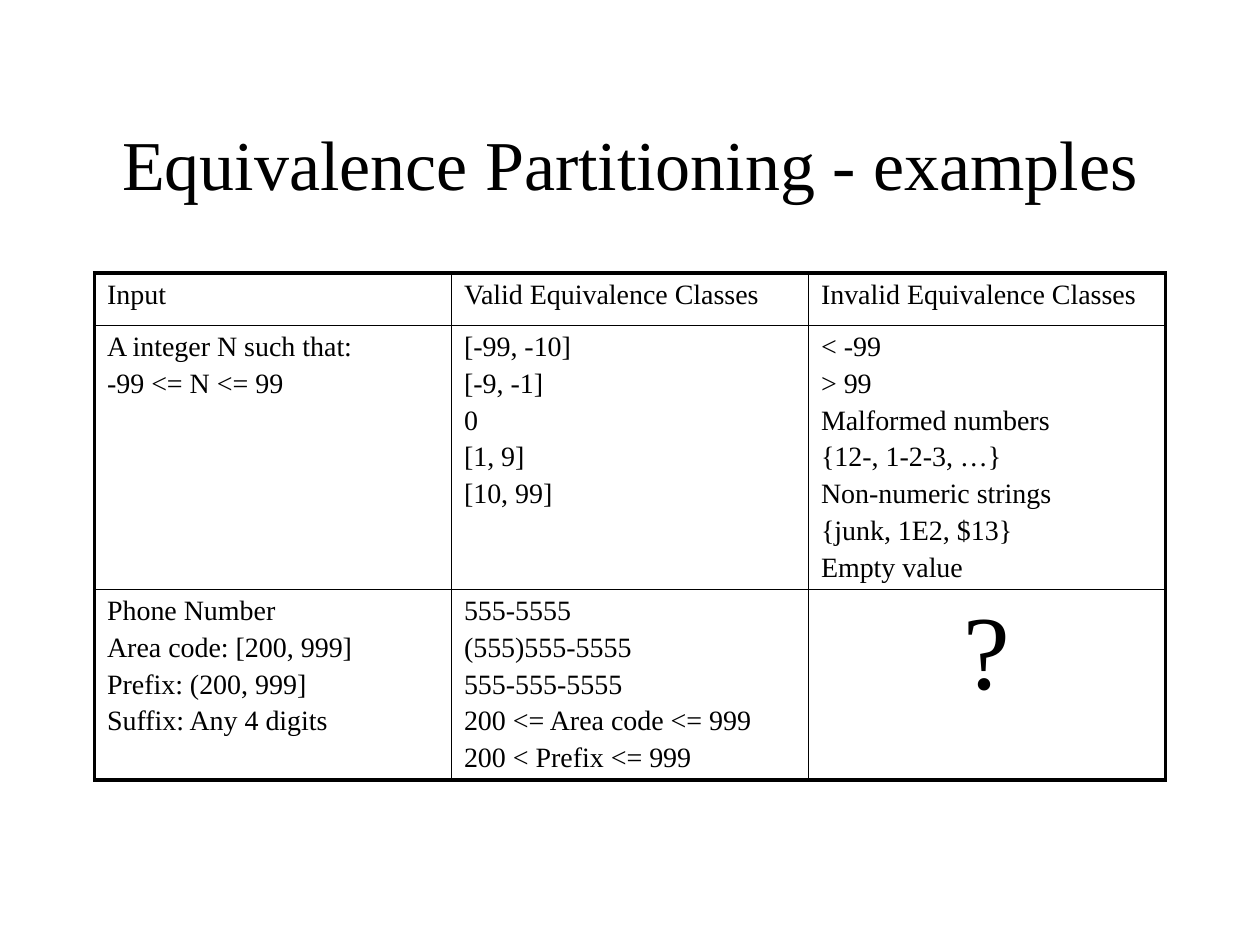
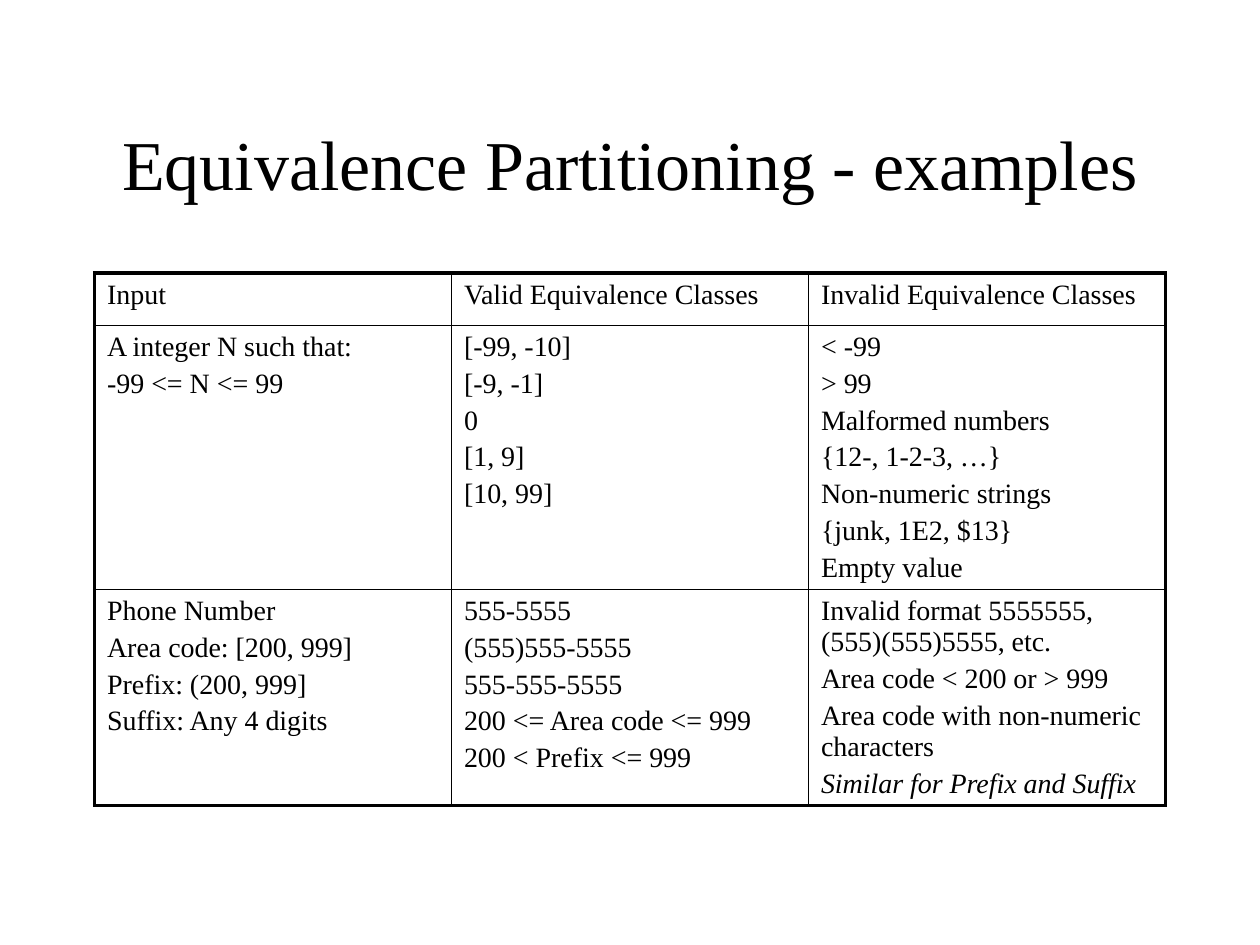
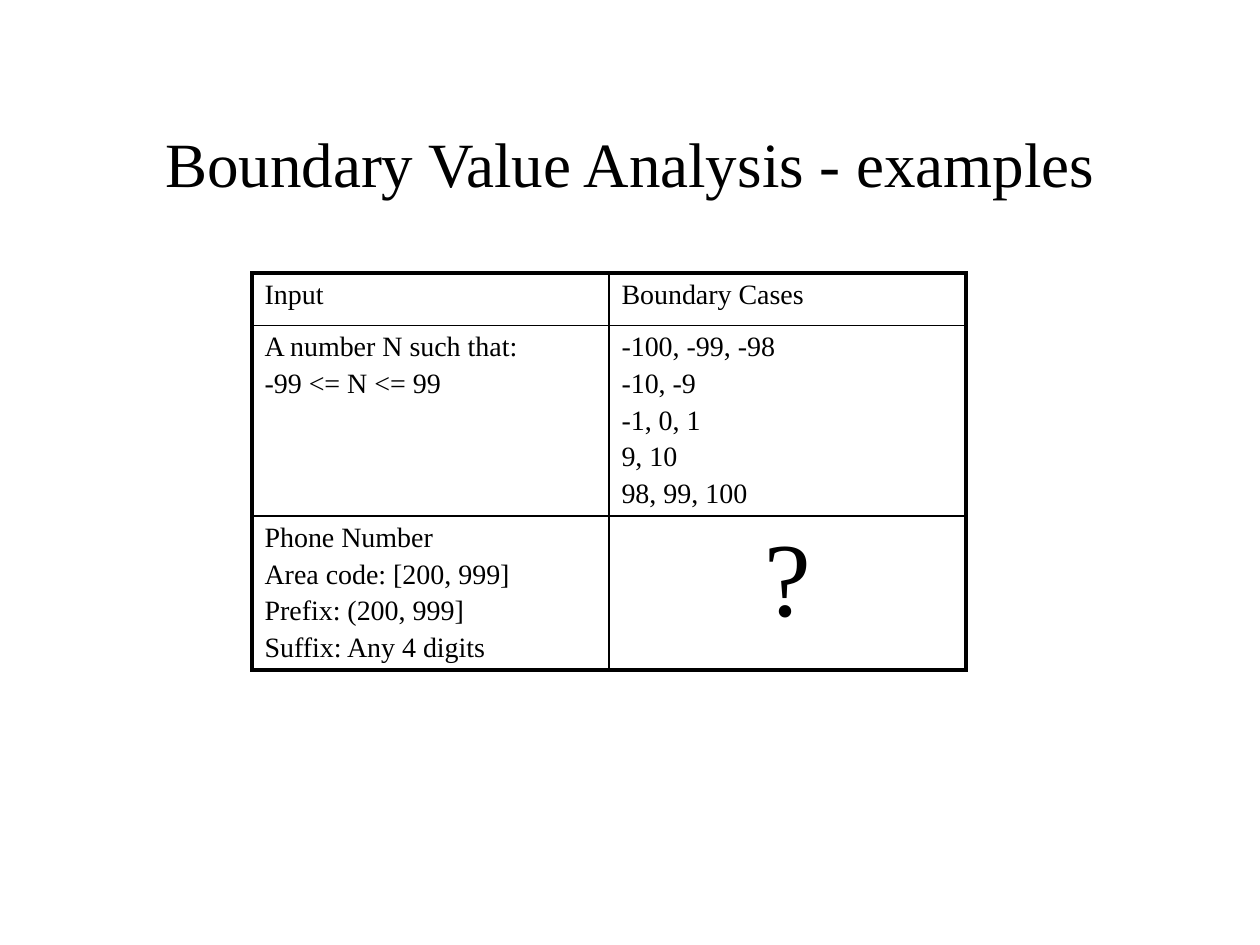
from dataclasses import dataclass

from lxml import etree
from pptx import Presentation
from pptx.dml.color import RGBColor
from pptx.enum.text import MSO_ANCHOR, MSO_AUTO_SIZE, PP_ALIGN
from pptx.oxml.ns import qn
from pptx.util import Pt

# Shared style
BLACK = RGBColor(0x00, 0x00, 0x00)
FONT = "Times New Roman"
CENTER = PP_ALIGN.CENTER
MIDDLE = MSO_ANCHOR.MIDDLE
NO_AUTOFIT = MSO_AUTO_SIZE.NONE
TITLE_ONLY = 5
TITLE_BOX = (Pt(54), Pt(48), Pt(612), Pt(90))
TABLE_TOP = Pt(156)
COLUMN_WIDTH = Pt(204)
HEADER_HEIGHT = Pt(30)
BODY_HEIGHT = Pt(80.64)
CELL_SIZE = Pt(16)
OUTER_LINE = Pt(2.25)
INNER_LINE = Pt(1)
SPACE_BEFORE_PERCENT = 20


@dataclass(frozen=True)
class Entry:
    """The lines of one table cell and how they look."""
    text: str
    size: Pt = CELL_SIZE
    centered: bool = False
    last_italic: bool = False


@dataclass(frozen=True)
class ExampleSlide:
    title: str
    title_size: Pt
    table_left: Pt
    table_height: Pt
    rows: list[list[Entry]]


# Content
OPEN_QUESTION = Entry("?", size=Pt(60), centered=True)
INPUT = Entry("Input")
PHONE_INPUT = Entry(
    "Phone Number\nArea code: [200, 999]\nPrefix: (200, 999]\nSuffix: Any 4 digits")
PHONE_INVALID = Entry(
    "Invalid format 5555555, (555)(555)5555, etc.\nArea code < 200 or > 999\n"
    "Area code with non-numeric characters\nSimilar for Prefix and Suffix",
    last_italic=True)


def partitioning_slide(phone_invalid: Entry, table_height: Pt) -> ExampleSlide:
    return ExampleSlide(
        "Equivalence Partitioning - examples", Pt(40), Pt(54), table_height,
        [
            [INPUT, Entry("Valid Equivalence Classes"),
             Entry("Invalid Equivalence Classes")],
            [Entry("A integer N such that:\n-99 <= N <= 99"),
             Entry("[-99, -10]\n[-9, -1]\n0\n[1, 9]\n[10, 99]"),
             Entry("< -99\n> 99\nMalformed numbers\n{12-, 1-2-3, …}\n"
                   "Non-numeric strings\n{junk, 1E2, $13}\nEmpty value")],
            [PHONE_INPUT,
             Entry("555-5555\n(555)555-5555\n555-555-5555\n"
                   "200 <= Area code <= 999\n200 < Prefix <= 999"),
             phone_invalid],
        ])


SLIDES = [
    partitioning_slide(OPEN_QUESTION, Pt(313)),
    partitioning_slide(PHONE_INVALID, Pt(328)),
    ExampleSlide(
        "Boundary Value Analysis - examples", Pt(36), Pt(144), Pt(244),
        [
            [INPUT, Entry("Boundary Cases")],
            [Entry("A number N such that:\n-99 <= N <= 99"),
             Entry("-100, -99, -98\n-10, -9\n-1, 0, 1\n9, 10\n98, 99, 100")],
            [PHONE_INPUT, OPEN_QUESTION],
        ]),
]


def style_font(font, size: Pt, italic: bool = False) -> None:
    font.name = FONT
    font.size = size
    font.italic = italic
    font.color.rgb = BLACK


def set_space_before(paragraph, percent: int) -> None:
    """Set paragraph spacing relative to the line height."""
    space = etree.Element(qn("a:spcBef"))
    etree.SubElement(space, qn("a:spcPct")).set("val", str(percent * 1000))
    paragraph._p.get_or_add_pPr().insert(0, space)


def set_borders(cell, widths: dict[str, Pt]) -> None:
    """Draw solid borders, given in the order left, right, top, bottom."""
    properties = cell._tc.get_or_add_tcPr()
    for position, (side, width) in enumerate(widths.items()):
        line = etree.Element(qn(f"a:ln{side}"), w=str(width))
        fill = etree.SubElement(line, qn("a:solidFill"))
        etree.SubElement(fill, qn("a:srgbClr")).set("val", str(BLACK))
        properties.insert(position, line)


def fill_cell(cell, entry: Entry) -> None:
    cell.fill.background()
    cell.text_frame.text = entry.text
    paragraphs = cell.text_frame.paragraphs
    for number, paragraph in enumerate(paragraphs, start=1):
        set_space_before(paragraph, SPACE_BEFORE_PERCENT)
        if entry.centered:
            paragraph.alignment = CENTER
        italic = entry.last_italic and number == len(paragraphs)
        for run in paragraph.runs:
            style_font(run.font, entry.size, italic)


def add_title(slide, content: ExampleSlide) -> None:
    title = slide.shapes.title
    title.left, title.top, title.width, title.height = TITLE_BOX
    frame = title.text_frame
    frame.text = content.title
    frame.word_wrap = True
    frame.auto_size = NO_AUTOFIT
    frame.vertical_anchor = MIDDLE
    paragraph = frame.paragraphs[0]
    paragraph.alignment = CENTER
    style_font(paragraph.runs[0].font, content.title_size)


def add_example_table(slide, content: ExampleSlide) -> None:
    row_count, column_count = len(content.rows), len(content.rows[0])
    table_frame = slide.shapes.add_table(
        row_count, column_count, content.table_left, TABLE_TOP,
        COLUMN_WIDTH * column_count, content.table_height)
    table = table_frame.table
    table.first_row = False
    table.horz_banding = False
    for column in table.columns:
        column.width = COLUMN_WIDTH

    # Cells, with a heavier line around the whole table
    for r, entries in enumerate(content.rows):
        table.rows[r].height = BODY_HEIGHT if r else HEADER_HEIGHT
        for c, entry in enumerate(entries):
            cell = table.cell(r, c)
            fill_cell(cell, entry)
            on_edge = {"L": c == 0, "R": c == column_count - 1,
                       "T": r == 0, "B": r == row_count - 1}
            set_borders(cell, {side: OUTER_LINE if outer else INNER_LINE
                               for side, outer in on_edge.items()})

    # Rows grow with their text inside this frame
    table_frame.height = content.table_height


def main() -> None:
    presentation = Presentation()
    presentation.slide_width = Pt(720)
    presentation.slide_height = Pt(540)
    for content in SLIDES:
        slide = presentation.slides.add_slide(presentation.slide_layouts[TITLE_ONLY])
        add_title(slide, content)
        add_example_table(slide, content)
    presentation.save("out.pptx")


if __name__ == "__main__":
    main()
